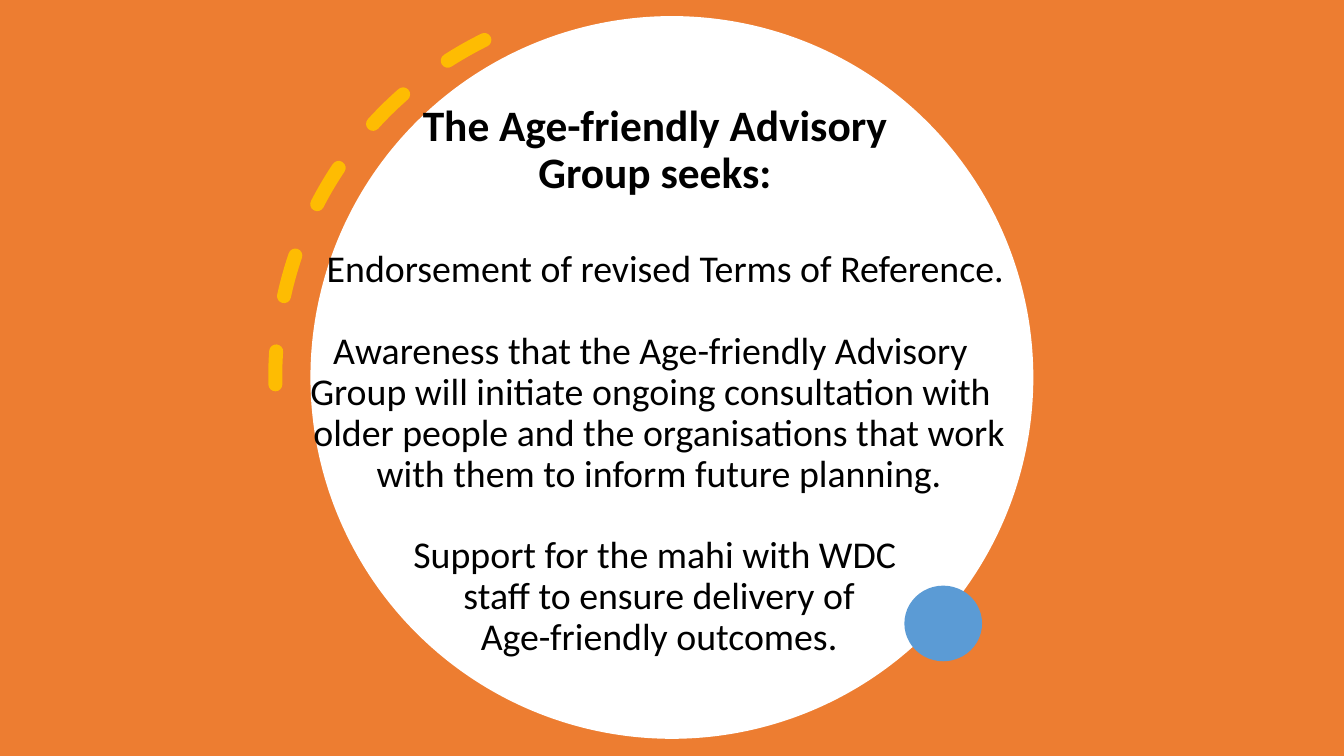
from copy import deepcopy
from dataclasses import dataclass

from lxml import etree
from pptx import Presentation
from pptx.dml.color import RGBColor
from pptx.enum.dml import MSO_LINE
from pptx.enum.shapes import MSO_SHAPE
from pptx.enum.text import MSO_ANCHOR, MSO_AUTO_SIZE, PP_ALIGN
from pptx.oxml.ns import qn
from pptx.util import Inches, Pt

RECTANGLE, ELLIPSE, ARC = MSO_SHAPE.RECTANGLE, MSO_SHAPE.OVAL, MSO_SHAPE.ARC
CENTER, TOP = PP_ALIGN.CENTER, MSO_ANCHOR.TOP
FIXED_SIZE, DASH = MSO_AUTO_SIZE.NONE, MSO_LINE.DASH
SLIDE_WIDTH, SLIDE_HEIGHT = Inches(13.33), Inches(7.5)
TITLE_AND_CONTENT = 1


@dataclass(frozen=True)
class Theme:
    font: str = "Calibri"
    text: str = "000000"
    backdrop: str = "ED7D31"
    disc: str = "FFFFFF"
    dot: str = "5B9BD5"
    arc: str = "FFC000"
    heading_size: float = 31
    body_size: float = 27
    item_gap: float = 29
    line_spacing: float = 0.9
    arc_width: float = 10


@dataclass(frozen=True)
class Box:
    """An area in percent of the slide's width and height."""
    left: float
    top: float
    width: float
    height: float

    def lengths(self) -> tuple[int, int, int, int]:
        return (int(SLIDE_WIDTH * self.left / 100), int(SLIDE_HEIGHT * self.top / 100),
                int(SLIDE_WIDTH * self.width / 100), int(SLIDE_HEIGHT * self.height / 100))


@dataclass(frozen=True)
class FilledShape:
    kind: int
    box: Box
    color: str


@dataclass(frozen=True)
class Item:
    text: str
    indent: float = 0  # percent of the slide's width


THEME = Theme()
BACKDROP = FilledShape(RECTANGLE, Box(0, 0, 100, 100), THEME.backdrop)
DISC = FilledShape(ELLIPSE, Box(23.1, 2.13, 53.79, 95.6), THEME.disc)
DOT = FilledShape(ELLIPSE, Box(67.29, 77.47, 5.78, 10), THEME.dot)
ARC_BOX = Box(20.48, 0.13, 55.89, 99.33)
HEADING_BOX = Box(14.85, 13.75, 67.74, 12.7)
ITEMS_BOX = Box(14.85, 33.1, 67.74, 55)

HEADING = "The Age-friendly Advisory\nGroup seeks:"
ITEMS = [
    Item("Endorsement of revised Terms of Reference.", indent=1.56),
    Item("Awareness that the Age-friendly Advisory \n"
         "Group will initiate ongoing consultation with \n"
         " older people and the organisations that work\n"
         " with them to inform future planning."),
    Item("Support for the mahi with WDC\n"
         " staff to ensure delivery of\n"
         " Age-friendly outcomes."),
]


def add_filled_shape(slide, item: FilledShape) -> None:
    shape = slide.shapes.add_shape(item.kind, *item.box.lengths())
    shape.shadow.inherit = False
    shape.fill.solid()
    shape.fill.fore_color.rgb = RGBColor.from_string(item.color)
    shape.line.fill.background()


def add_dashed_arc(slide, box: Box) -> None:
    shape = slide.shapes.add_shape(ARC, *box.lengths())
    shape.shadow.inherit = False
    shape.fill.background()
    # Arc angles are in units of 5/3 degree.
    shape.adjustments[0], shape.adjustments[1] = 162, 200.93
    shape.rotation = 153.7
    shape.line.color.rgb = RGBColor.from_string(THEME.arc)
    shape.line.width = Pt(THEME.arc_width)
    shape.line.dash_style = DASH
    properties = shape.element.spPr
    properties.find(qn("a:xfrm")).set("flipV", "1")
    line = properties.find(qn("a:ln"))
    line.set("cap", "rnd")
    color = line.find(f"{qn('a:solidFill')}/{qn('a:srgbClr')}")
    etree.SubElement(color, qn("a:alpha")).set("val", "95000")


def write_paragraph(paragraph, text: str, *, size: float, bold: bool = False,
                    space_before: float = 0, indent: float = 0) -> None:
    """Write centred text; line breaks take the format of the text."""
    paragraph.alignment = CENTER
    paragraph.line_spacing = THEME.line_spacing
    paragraph.space_before = Pt(space_before)
    paragraph.space_after = Pt(0)
    for number, line in enumerate(text.split("\n")):
        if number:
            paragraph.add_line_break()
        run = paragraph.add_run()
        run.text = line
        run.font.name = THEME.font
        run.font.size = Pt(size)
        run.font.bold = bold
        run.font.color.rgb = RGBColor.from_string(THEME.text)
    for line_break in paragraph._p.findall(qn("a:br")):
        line_break.append(deepcopy(paragraph.runs[0].font._element))
    properties = paragraph._p.get_or_add_pPr()
    properties.set("marL", str(int(SLIDE_WIDTH * indent / 100)))
    properties.set("indent", "0")
    etree.SubElement(properties, qn("a:buNone"))


def place_placeholder(slide, placeholder, box: Box):
    """Move a placeholder to its box, in front of what is drawn so far."""
    placeholder.left, placeholder.top, placeholder.width, placeholder.height = box.lengths()
    slide.shapes.element.append(placeholder.element)
    frame = placeholder.text_frame
    frame.margin_left = frame.margin_right = frame.margin_top = frame.margin_bottom = 0
    frame.vertical_anchor = TOP
    frame.auto_size = FIXED_SIZE
    frame.word_wrap = True
    return frame


def main() -> None:
    presentation = Presentation()
    presentation.slide_width, presentation.slide_height = SLIDE_WIDTH, SLIDE_HEIGHT
    slide = presentation.slides.add_slide(presentation.slide_layouts[TITLE_AND_CONTENT])
    title, body = slide.shapes.title, slide.placeholders[1]

    add_filled_shape(slide, BACKDROP)
    add_filled_shape(slide, DISC)

    heading = place_placeholder(slide, title, HEADING_BOX)
    write_paragraph(heading.paragraphs[0], HEADING, size=THEME.heading_size, bold=True)

    items = place_placeholder(slide, body, ITEMS_BOX)
    for number, item in enumerate(ITEMS):
        paragraph = items.add_paragraph() if number else items.paragraphs[0]
        write_paragraph(paragraph, item.text, size=THEME.body_size, indent=item.indent,
                        space_before=THEME.item_gap if number else 0)

    add_dashed_arc(slide, ARC_BOX)
    add_filled_shape(slide, DOT)
    presentation.save("out.pptx")


if __name__ == "__main__":
    main()
